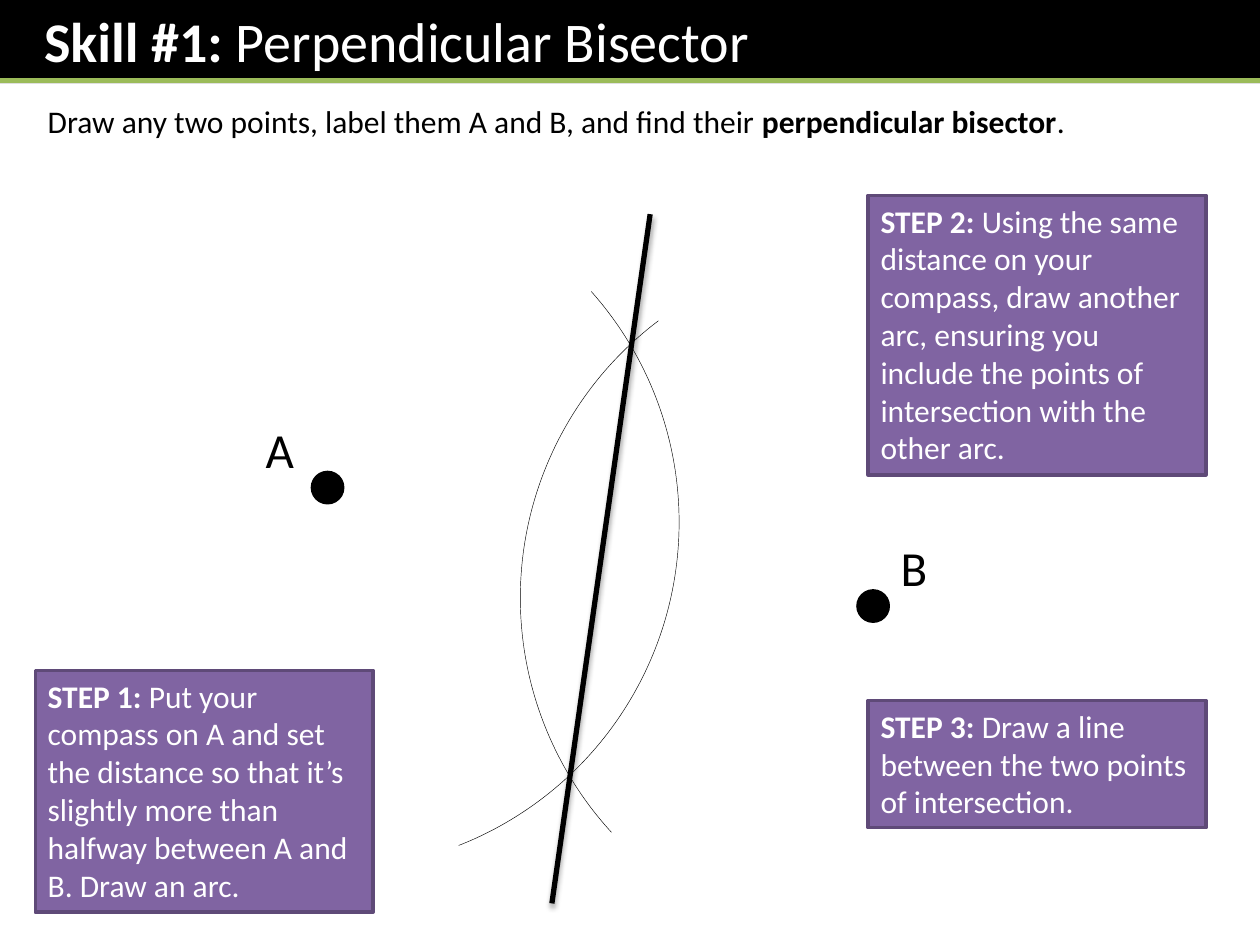
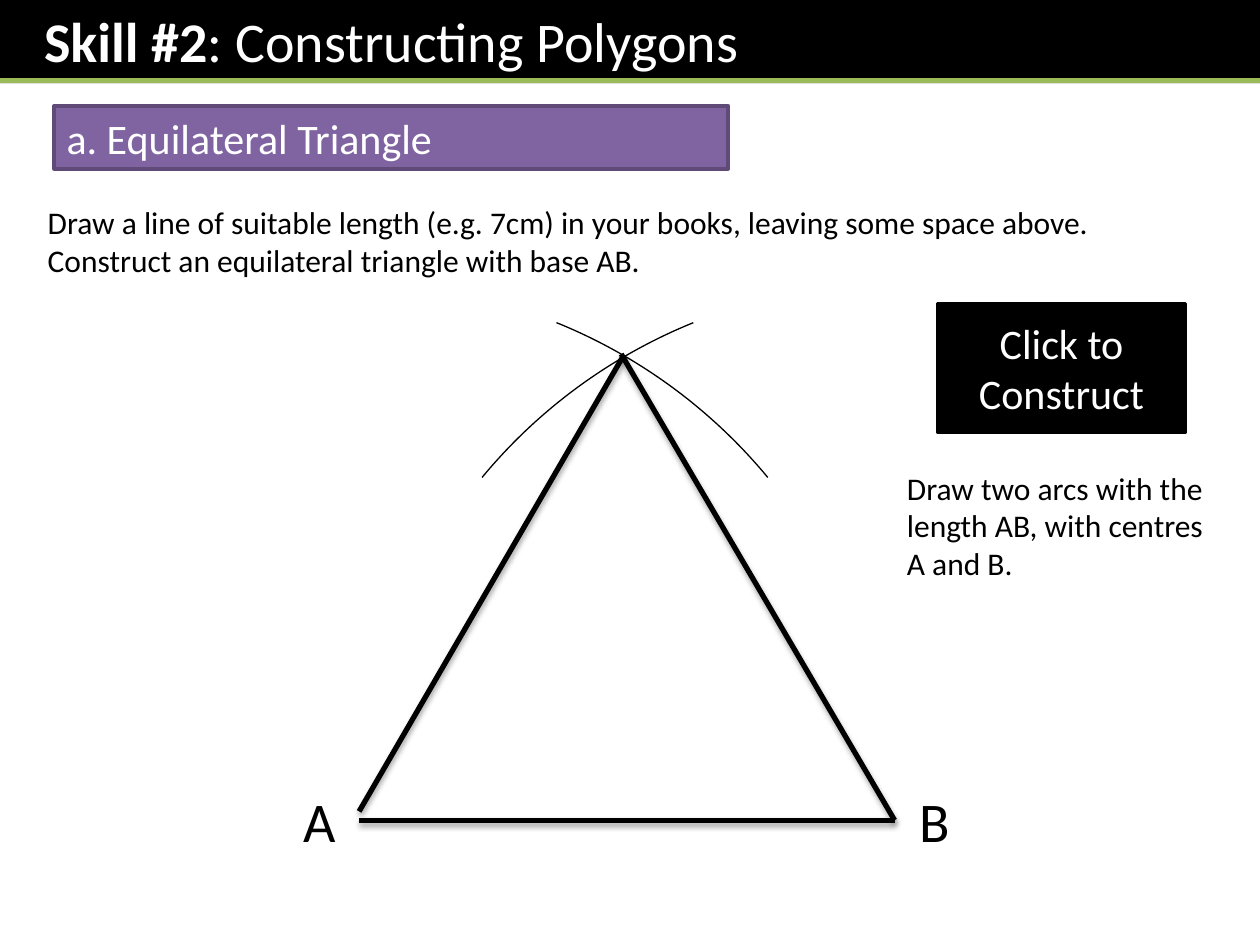
from lxml import etree
from pptx import Presentation
from pptx.dml.color import RGBColor
from pptx.enum.shapes import MSO_CONNECTOR, MSO_SHAPE
from pptx.enum.text import MSO_ANCHOR, MSO_AUTO_SIZE, PP_ALIGN
from pptx.oxml.ns import qn
from pptx.util import Inches, Pt

RECT, OVAL, ARC = MSO_SHAPE.RECTANGLE, MSO_SHAPE.OVAL, MSO_SHAPE.ARC
LEFT, CENTER = PP_ALIGN.LEFT, PP_ALIGN.CENTER
TOP, MIDDLE = MSO_ANCHOR.TOP, MSO_ANCHOR.MIDDLE
FONT = "Calibri"
BLACK, WHITE = "000000", "FFFFFF"
GREEN, PURPLE, DARK_PURPLE = "9BBB59", "8064A2", "5F4A78"


def rgb(value):
    return RGBColor.from_string(value)


def write(sp, paragraphs, size, color, align=LEFT, anchor=TOP, grow=True):
    """Fill a shape with paragraphs, each a list of (text, bold) runs."""
    tf = sp.text_frame
    tf.word_wrap = True
    tf.vertical_anchor = anchor
    tf.auto_size = MSO_AUTO_SIZE.SHAPE_TO_FIT_TEXT if grow else MSO_AUTO_SIZE.NONE
    for i, runs in enumerate(paragraphs):
        p = tf.add_paragraph() if i else tf.paragraphs[0]
        p.alignment = align
        for text, bold in runs:
            r = p.add_run()
            r.text = text
            r.font.name = FONT
            r.font.size = Pt(size)
            r.font.bold = bold
            r.font.color.rgb = rgb(color)


def add_shape(s, kind, box, fill=None, line=None, width=2):
    sp = s.shapes.add_shape(kind, *map(Inches, box))
    sp.shadow.inherit = False
    if fill:
        sp.fill.solid()
        sp.fill.fore_color.rgb = rgb(fill)
    else:
        sp.fill.background()
    if line:
        sp.line.color.rgb = rgb(line)
        sp.line.width = Pt(width)
    else:
        sp.line.fill.background()
    return sp


def add_text(s, box, paragraphs, size=18, align=LEFT):
    sp = s.shapes.add_textbox(*map(Inches, box))
    write(sp, paragraphs, size, BLACK, align)


def add_purple_box(s, box, runs, size=18):
    write(add_shape(s, RECT, box, PURPLE, DARK_PURPLE), [runs], size, WHITE)


def add_step(s, number, box, text):
    add_purple_box(s, box, [(f"STEP {number}: ", True), (text, False)])


def add_line(s, start, end, color=BLACK, shadow=True):
    ln = s.shapes.add_connector(MSO_CONNECTOR.STRAIGHT, *map(Inches, start + end))
    ln.line.color.rgb = rgb(color)
    ln.line.width = Pt(3)
    effects = etree.SubElement(ln._element.spPr, qn("a:effectLst"))
    if shadow:
        outer = etree.SubElement(effects, qn("a:outerShdw"), blurRad=str(Pt(3.1)),
                                 dist=str(Pt(1.8)), dir="5400000", rotWithShape="0")
        tint = etree.SubElement(outer, qn("a:srgbClr"), val=BLACK)
        etree.SubElement(tint, qn("a:alpha"), val="35000")


def add_arc(s, left, top, diameter, start, end, width):
    """Draw a compass arc clockwise between two angles in degrees."""
    sp = add_shape(s, ARC, (left, top, diameter, diameter), None, BLACK, width)
    for i, angle in enumerate((start, end)):
        sp.adjustments[i] = angle * 60000 / 100000


def add_point(s, left, top):
    add_shape(s, OVAL, (left, top, 0.24, 0.24), BLACK, BLACK)


def add_header(s, skill, topic):
    band = add_shape(s, RECT, (0, 0, 10, 0.66), BLACK)
    write(band, [[(skill, True), (topic, False)]], 32, WHITE)
    band.text_frame.margin_left = Inches(0.35)
    add_line(s, (0, 0.64), (10, 0.64), GREEN, shadow=False)


def perpendicular_bisector(s):
    add_header(s, "Skill #1: ", "Perpendicular Bisector")
    add_text(s, (0.28, 0.76, 8.58, 0.4), [[
        ("Draw any two points, label them A and B, and find their ", False),
        ("perpendicular bisector", True), (".", False)]])
    add_point(s, 2.48, 3.75)
    add_point(s, 6.81, 4.69)
    add_text(s, (2.01, 3.28, 0.47, 0.57), [[("A", False)]], 28)
    add_text(s, (7.05, 4.22, 0.47, 0.57), [[("B", False)]], 28)
    add_arc(s, -0.12, 1.39, 5.51, 318.35, 68.6, 0.25)
    add_arc(s, 4.13, 1.99, 5.51, 137.51, 232.96, 0.25)
    add_line(s, (4.38, 7.17), (5.16, 1.7))
    add_step(s, 1, (0.28, 5.32, 2.68, 1.92),
             "Put your compass on A and set the distance so that it’s "
             "slightly more than halfway between A and B. Draw an arc.")
    add_step(s, 2, (6.89, 1.55, 2.68, 2.22),
             "Using the same distance on your compass, draw another arc, ensuring "
             "you include the points of intersection with the other arc.")
    add_step(s, 3, (6.89, 5.56, 2.68, 1.01),
             "Draw a line between the two points of intersection.")


def equilateral_triangle(s):
    add_header(s, "Skill #2", ": Constructing Polygons")
    add_purple_box(s, (0.43, 0.84, 5.35, 0.5), [("a. Equilateral Triangle", False)], 24)
    add_text(s, (0.28, 1.56, 8.58, 0.71), [
        [("Draw a line of suitable length (e.g. 7cm) in your books, "
          "leaving some space above.", False)],
        [("Construct an equilateral triangle with base AB.", False)]])
    for label, left in (("A", 2.22), ("B", 7.1)):
        add_text(s, (left, 6.19, 0.63, 0.64), [[(label, False)]], 32, CENTER)
    add_line(s, (2.85, 6.51), (7.1, 6.51))
    add_line(s, (2.85, 6.44), (4.95, 2.82))
    add_line(s, (7.1, 6.51), (4.93, 2.81))
    start, end = 292.07, 320.38
    add_arc(s, -1.43, 2.25, 8.5, start, end, 0.75)
    add_arc(s, 2.85, 2.25, 8.5, 540 - end, 540 - start, 0.75)
    button = add_shape(s, RECT, (7.44, 2.41, 1.97, 1.02), BLACK, BLACK)
    write(button, [[("Click to Construct", False)]], 24, WHITE, CENTER, MIDDLE, grow=False)
    add_text(s, (7.1, 3.67, 2.6, 1.01),
             [[("Draw two arcs with the length AB, with centres A and B.", False)]])


def main():
    prs = Presentation()
    prs.slide_width, prs.slide_height = Inches(10), Inches(7.5)
    for build in (perpendicular_bisector, equilateral_triangle):
        build(prs.slides.add_slide(prs.slide_layouts[6]))
    prs.save("out.pptx")


if __name__ == "__main__":
    main()
